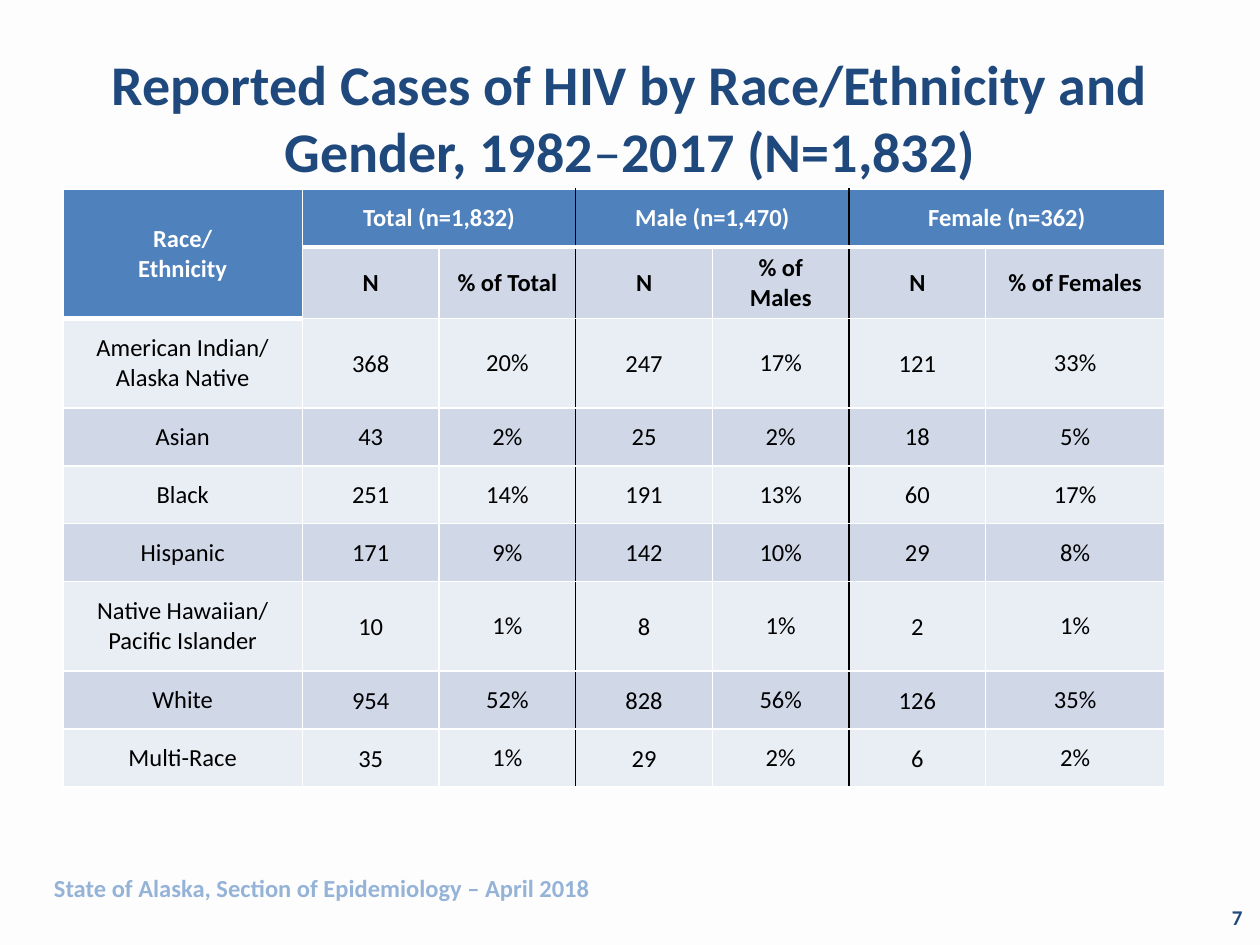
import pptx
import pptx.dml.color
import pptx.enum.text
import pptx.oxml.ns
import pptx.util
import lxml.etree

Inches = pptx.util.Inches
Pt = pptx.util.Pt
ALIGN = pptx.enum.text.PP_ALIGN
MIDDLE = pptx.enum.text.MSO_ANCHOR.MIDDLE

COLORS = {
    "background": "FDFDFE",
    "navy": "1F497D",
    "source": "95B3D7",
    "header": "4F81BD",
    "band_dark": "D0D8E8",
    "band_light": "E9EDF4",
    "white": "FFFFFF",
    "black": "000000",
}

COL_WIDTHS = [1.9] + [1.085] * 5 + [1.42]
ROW_HEIGHTS = [0.46, 0.46, 0.71, 0.46, 0.46, 0.46, 0.71, 0.46, 0.46]
GROUP_EDGES = (3, 5)  # columns that start after a black divider

GROUPS = ["Total (n=1,832)", "Male (n=1,470)", "Female (n=362)"]
SUBHEADS = ["N", "% of Total", "N", "% of Males", "N", "% of Females"]
CASES = [
    ["American Indian/\nAlaska Native", "368", "20%", "247", "17%", "121", "33%"],
    ["Asian", "43", "2%", "25", "2%", "18", "5%"],
    ["Black", "251", "14%", "191", "13%", "60", "17%"],
    ["Hispanic", "171", "9%", "142", "10%", "29", "8%"],
    ["Native Hawaiian/\nPacific Islander", "10", "1%", "8", "1%", "2", "1%"],
    ["White", "954", "52%", "828", "56%", "126", "35%"],
    ["Multi-Race", "35", "1%", "29", "2%", "6", "2%"],
]


def rgb(name):
    return pptx.dml.color.RGBColor.from_string(COLORS[name])


def add_run(p, text, size, color, bold=True):
    r = p.add_run()
    r.text = text
    r.font.name = "Calibri"
    r.font.size = Pt(size)
    r.font.bold = bold
    r.font.color.rgb = rgb(color)


def add_title(s, runs):
    sp = s.shapes.title
    sp.left, sp.top = Inches(0.5), Inches(0.3)
    sp.width, sp.height = Inches(9), Inches(1.25)
    tf = sp.text_frame
    tf.auto_size = pptx.enum.text.MSO_AUTO_SIZE.NONE
    tf.vertical_anchor = MIDDLE
    p = tf.paragraphs[0]
    p.alignment = ALIGN.CENTER
    for text, bold in runs:
        add_run(p, text, 32, "navy", bold)


def add_label(s, box, text, size, color, align, anchor):
    sp = s.shapes.add_textbox(*[Inches(v) for v in box])
    tf = sp.text_frame
    tf.word_wrap = True
    tf.vertical_anchor = anchor
    p = tf.paragraphs[0]
    p.alignment = align
    add_run(p, text, size, color)


def set_border(cell, side, color, width):
    ns = pptx.oxml.ns.qn
    tc_pr = cell._tc.get_or_add_tcPr()
    ln = lxml.etree.SubElement(tc_pr, ns("a:ln" + side), w=str(Pt(width)))
    fill = lxml.etree.SubElement(ln, ns("a:solidFill"))
    lxml.etree.SubElement(fill, ns("a:srgbClr"), val=COLORS[color])


def style_cell(cell, row, col):
    """Borders come before the fill, as the file format requires."""
    last = col + cell.span_width if cell.is_merge_origin else col + 1
    set_border(cell, "L", "black" if col in GROUP_EDGES else "white", 1)
    set_border(cell, "R", "black" if last in GROUP_EDGES else "white", 1)
    set_border(cell, "T", "white", 3 if row == 1 else 1)
    set_border(cell, "B", "white", 3 if row == 0 else 1)
    if row == 0 or (row == 1 and col == 0):
        band = "header"
    else:
        band = "band_dark" if row % 2 else "band_light"
    cell.fill.solid()
    cell.fill.fore_color.rgb = rgb(band)


def fill_cell(cell, text, color, bold):
    cell.vertical_anchor = MIDDLE
    tf = cell.text_frame
    for i, line in enumerate(text.split("\n")):
        p = tf.add_paragraph() if i else tf.paragraphs[0]
        p.alignment = ALIGN.CENTER
        add_run(p, line, 14, color, bold)


def add_case_table(s):
    # Header rows share the column grid with the case rows
    heads = ["Race/\nEthnicity"]
    for group in GROUPS:
        heads += [group, ""]
    rows = [heads, [""] + SUBHEADS] + CASES

    frame = s.shapes.add_table(len(rows), len(COL_WIDTHS), Inches(0.5), Inches(1.5),
                               Inches(sum(COL_WIDTHS)), Inches(sum(ROW_HEIGHTS)))
    table = frame.table
    table.first_row = table.horz_banding = False
    for column, width in zip(table.columns, COL_WIDTHS):
        column.width = Inches(width)
    for table_row, height in zip(table.rows, ROW_HEIGHTS):
        table_row.height = Inches(height)

    # Merged headers
    table.cell(0, 0).merge(table.cell(1, 0))
    for col in (1, 3, 5):
        table.cell(0, col).merge(table.cell(0, col + 1))

    for row, texts in enumerate(rows):
        for col, text in enumerate(texts):
            cell = table.cell(row, col)
            style_cell(cell, row, col)
            if cell.is_spanned:
                continue
            fill_cell(cell, text, "black" if row else "white", row < 2)
            # Counts sit in tight cells
            if row > 1 and col % 2:
                cell.margin_left = cell.margin_right = cell.margin_top = Inches(0.01)
                cell.margin_bottom = 0


def main():
    prs = pptx.Presentation()
    prs.slide_width, prs.slide_height = Inches(10), Inches(7.5)
    s = prs.slides.add_slide(prs.slide_layouts[5])
    s.background.fill.solid()
    s.background.fill.fore_color.rgb = rgb("background")

    # Title
    add_title(s, [
        ("Reported Cases of HIV by Race/Ethnicity and Gender, 1982", True),
        ("–", False),
        ("2017 (N=1,832)", True),
    ])

    # Page number and source
    add_label(s, (7.63, 7.08, 2.33, 0.4), "7", 12, "navy", ALIGN.RIGHT, MIDDLE)
    add_label(s, (0.33, 6.88, 7, 0.34),
              "State of Alaska, Section of Epidemiology – April 2018",
              14, "source", ALIGN.LEFT, pptx.enum.text.MSO_ANCHOR.TOP)

    # Case counts
    add_case_table(s)
    prs.save("out.pptx")


if __name__ == "__main__":
    main()
